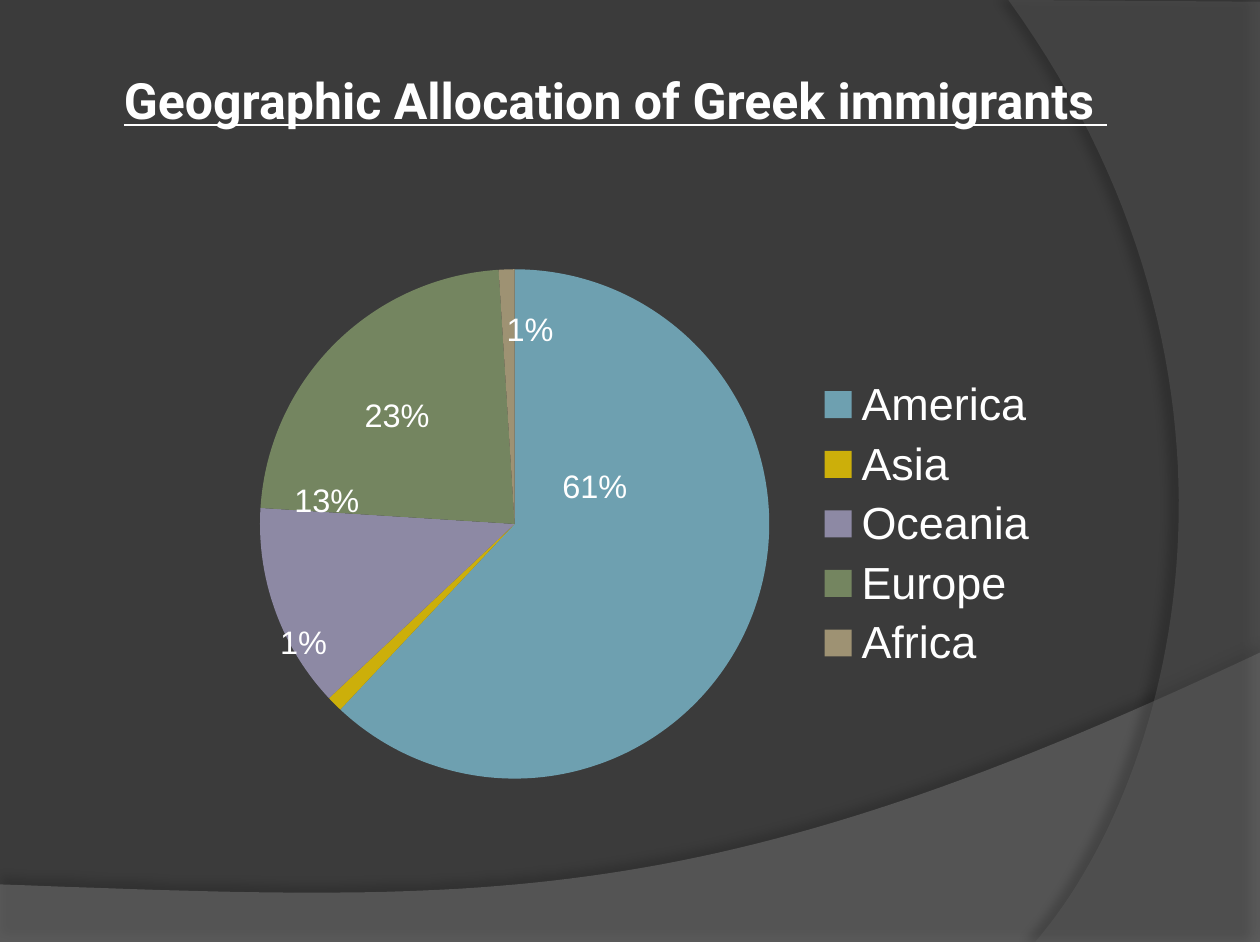
import lxml.etree
import pptx
import pptx.chart.data
import pptx.dml.color
import pptx.enum.chart
import pptx.enum.shapes
import pptx.oxml
import pptx.oxml.ns
import pptx.util

Inches = pptx.util.Inches
WHITE = "FFFFFF"
PIE_BLUE = "6EA0B0"
REGIONS = [
    ("America", 62, PIE_BLUE),
    ("Asia", 1, "CCAF0A"),
    ("Oceania", 13, "8D89A4"),
    ("Europe", 23, "748560"),
    ("Africa", 1, "9E9273"),
]
LABELS = [
    ("13%", 1.54, 2.62, 0.63),
    ("23%", 1.93, 2.15, 0.63),
    ("1%", 1.46, 3.41, 0.55),
    ("1%", 2.72, 1.67, 0.47),
]


def color(value):
    """Turn a hex string into a colour."""
    return pptx.dml.color.RGBColor.from_string(value)


def paint(fill, value):
    """Fill with one solid colour."""
    fill.solid()
    fill.fore_color.rgb = color(value)


def curve(start, control_1, control_2, end, steps=60):
    """Return points along a cubic curve."""
    points = []
    for step in range(steps + 1):
        t = step / steps
        weights = ((1 - t) ** 3, 3 * t * (1 - t) ** 2, 3 * t * t * (1 - t), t ** 3)
        corners = (start, control_1, control_2, end)
        points.append(tuple(
            sum(weight * corner[axis] for weight, corner in zip(weights, corners))
            for axis in (0, 1)))
    return points


def add_wave(page, points, value, opacity, shadow_opacity, distance, direction):
    """Add a translucent outline with a soft outer shadow."""
    points = [(Inches(x), Inches(y)) for x, y in points]
    builder = page.shapes.build_freeform(*points[0])
    builder.add_line_segments(points[1:], close=True)
    wave = builder.convert_to_shape()
    paint(wave.fill, value)
    wave.line.fill.background()
    fill_color = wave.fill._xPr.find(".//" + pptx.oxml.ns.qn("a:srgbClr"))
    alpha = lxml.etree.SubElement(fill_color, pptx.oxml.ns.qn("a:alpha"))
    alpha.set("val", str(opacity * 1000))
    wave.shadow.inherit = False
    effects = wave._element.spPr.find(pptx.oxml.ns.qn("a:effectLst"))
    effects.append(pptx.oxml.parse_xml(
        f'<a:outerShdw {pptx.oxml.ns.nsdecls("a")} blurRad="{pptx.util.Pt(4)}" '
        f'dist="{pptx.util.Pt(distance)}" dir="{direction * 60000}" algn="ctr" rotWithShape="0">'
        f'<a:srgbClr val="000000"><a:alpha val="{shadow_opacity * 1000}"/></a:srgbClr>'
        '</a:outerShdw>'))


def write(box, text, size, font="Arial", strong=False):
    """Write white left-aligned text in a box."""
    box.text_frame.word_wrap = True
    box.text_frame.text = text
    para = box.text_frame.paragraphs[0]
    para.alignment = pptx.enum.text.PP_ALIGN.LEFT
    span = para.runs[0]
    span.font.name = font
    span.font.size = pptx.util.Pt(size)
    span.font.bold = span.font.underline = strong
    span.font.color.rgb = color(WHITE)


def add_text(page, text, left, top, width, height, *style):
    """Add a text box."""
    box = page.shapes.add_textbox(Inches(left), Inches(top), Inches(width), Inches(height))
    write(box, text, *style)


def add_filled_label(page, text, left, top, width, height):
    """Add a label on a rectangle in the colour of its slice."""
    box = page.shapes.add_shape(
        pptx.enum.shapes.MSO_SHAPE.RECTANGLE,
        Inches(left), Inches(top), Inches(width), Inches(height))
    box.shadow.inherit = False
    paint(box.fill, PIE_BLUE)
    box.line.color.rgb = color(PIE_BLUE)
    box.line.width = pptx.util.Pt(0.75)
    write(box, text, 13)


def add_pie(page):
    """Add the pie of regions with its legend."""
    names, values, colors = zip(*REGIONS)
    data = pptx.chart.data.CategoryChartData()
    data.categories = names
    data.add_series("Series 1", values)
    chart = page.shapes.add_chart(
        pptx.enum.chart.XL_CHART_TYPE.PIE,
        Inches(1.22), Inches(1.36), Inches(4.67), Inches(3.11), data).chart
    chart.has_title = False
    chart.font.name = "Arial"
    chart.font.size = pptx.util.Pt(18)
    chart.font.color.rgb = color(WHITE)
    chart.has_legend = True
    chart.legend.position = pptx.enum.chart.XL_LEGEND_POSITION.RIGHT
    chart.legend.include_in_layout = False
    plot = chart.plots[0]
    plot.vary_by_categories = True
    for index, value in enumerate(colors):
        point = plot.series[0].points[index]
        paint(point.format.fill, value)
        point.format.line.fill.background()


def main():
    """Build the slide and save it."""
    deck = pptx.Presentation()
    deck.slide_width, deck.slide_height = Inches(7.01), Inches(5.24)
    page = deck.slides.add_slide(deck.slide_layouts[6])
    paint(page.background.fill, "3B3B3B")
    bottom = [(0, 4.92), (0, 5.24), (7.01, 5.24)]
    bottom += curve((7.01, 3.63), (3.92, 5.09), (2.74, 5.02), (0, 4.92))
    add_wave(page, bottom, "7F7F7F", 45, 35, 3.5, 270)
    side = [(7.01, 0.01), (7.01, 5.24)]
    side += curve((5.76, 5.24), (6.55, 4.32), (7.13, 2.1), (5.61, 0))
    add_wave(page, side, "5E5E5E", 40, 45, 4, 180)
    add_pie(page)
    add_text(page, "Geographic Allocation of Greek immigrants ",
             0.59, 0.34, 5.98, 0.44, 20, "Roboto", True)
    add_filled_label(page, "61%", 3.03, 2.54, 0.71, 0.32)
    for text, left, top, width in LABELS:
        add_text(page, text, left, top, width, 0.32, 13)
    deck.save("out.pptx")


if __name__ == "__main__":
    main()
